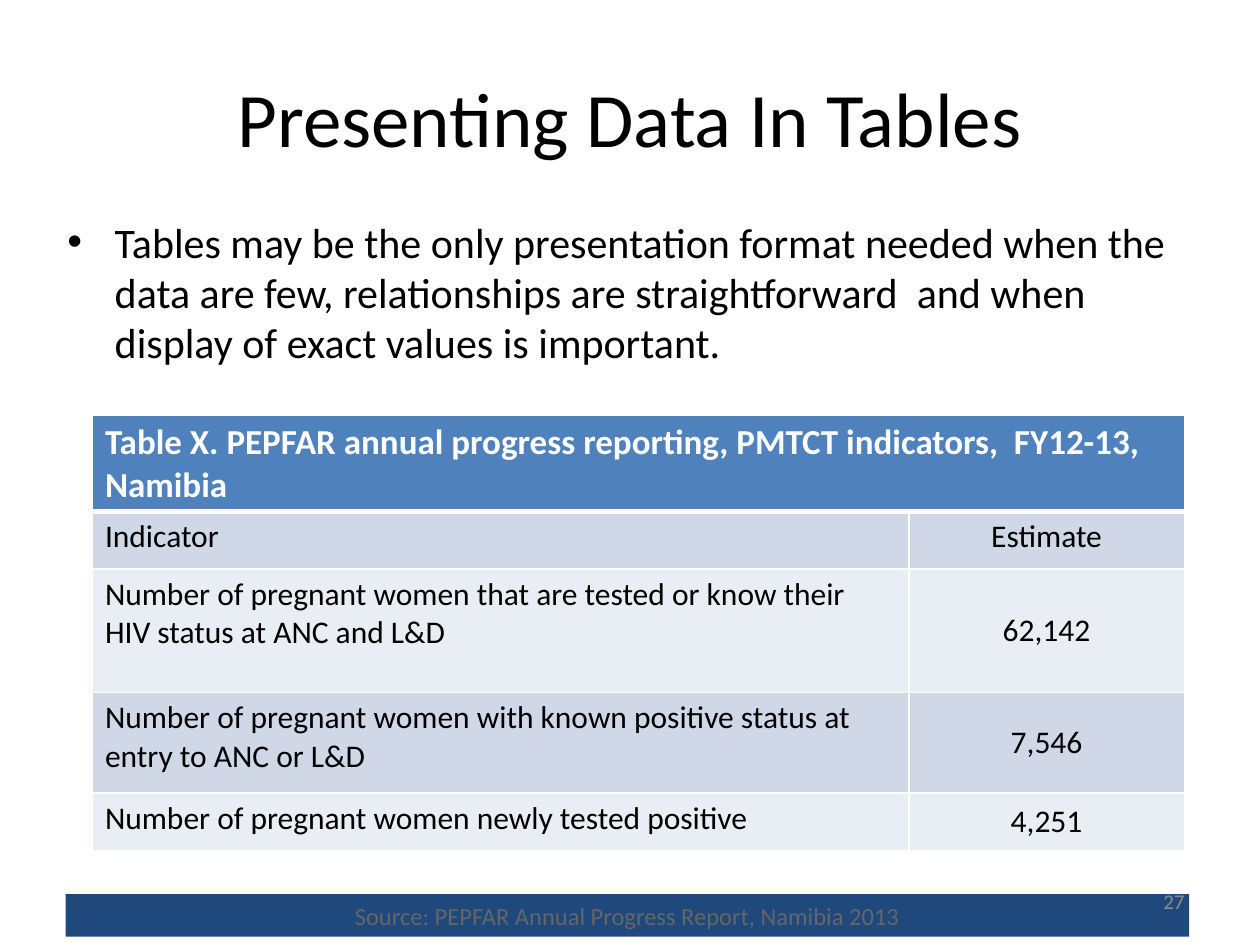
from pptx import Presentation
from pptx.dml.color import RGBColor
from pptx.enum.shapes import MSO_SHAPE as Shape
from pptx.enum.text import MSO_ANCHOR as Anchor, PP_ALIGN as Align
from pptx.oxml import parse_xml
from pptx.oxml.ns import nsdecls
from pptx.util import Pt

BLACK = RGBColor(0x00, 0x00, 0x00)
WHITE = RGBColor(0xFF, 0xFF, 0xFF)
HEADER_BLUE = RGBColor(0x4F, 0x81, 0xBD)
BANDS = (RGBColor(0xD0, 0xD8, 0xE8), RGBColor(0xE9, 0xED, 0xF4))
NAVY = RGBColor(0x1F, 0x49, 0x7D)
SOURCE_GRAY = RGBColor(0x66, 0x66, 0x66)
NUMBER_GRAY = RGBColor(0x8C, 0x8C, 0x8C)

TABLE_TITLE = "Table X. PEPFAR annual progress reporting, PMTCT indicators,  FY12-13, Namibia"
INDICATORS = [
    ("Indicator", "Estimate"),
    ("Number of pregnant women that are tested or know their HIV status at ANC and L&D", "62,142"),
    ("Number of pregnant women with known positive status at entry to ANC or L&D", "7,546"),
    ("Number of pregnant women newly tested positive", "4,251"),
]


def write(frame, text, size=18, color=BLACK, bold=False, align=Align.LEFT):
    paragraph = frame.paragraphs[0]
    paragraph.alignment = align
    run = paragraph.add_run()
    run.text = text
    run.font.name = "Calibri"
    run.font.size = Pt(size)
    run.font.bold = bold
    run.font.color.rgb = color
    return paragraph


def add_bullet(paragraph, indent):
    properties = paragraph._p.get_or_add_pPr()
    properties.set("marL", str(Pt(indent)))
    properties.set("indent", str(-Pt(indent)))
    for tag in ('buFont %s typeface="Arial"', 'buChar %s char="•"'):
        properties.append(parse_xml(f"<a:{tag % nsdecls('a')}/>"))


def set_borders(cell, **widths):
    properties = cell._tc.get_or_add_tcPr()
    for index, side in enumerate("LRTB"):
        properties.insert(index, parse_xml(
            f'<a:ln{side} {nsdecls("a")} w="{Pt(widths.get(side, 1))}">'
            f'<a:solidFill><a:srgbClr val="{WHITE}"/></a:solidFill></a:ln{side}>'))


class SlideBuilder:
    """Draws styled elements on the current slide, with lengths in points."""

    def __init__(self, presentation):
        self.slide = presentation.slides.add_slide(presentation.slide_layouts[6])

    def text(self, box, text, anchor=Anchor.TOP, **style):
        frame = self.slide.shapes.add_textbox(*map(Pt, box)).text_frame
        frame.word_wrap = True
        frame.vertical_anchor = anchor
        return write(frame, text, **style)

    def bar(self, box, text, fill, **style):
        shape = self.slide.shapes.add_shape(Shape.RECTANGLE, *map(Pt, box))
        shape.shadow.inherit = False
        shape.fill.solid()
        shape.fill.fore_color.rgb = fill
        shape.line.fill.background()
        shape.text_frame.word_wrap = True
        shape.text_frame.vertical_anchor = Anchor.MIDDLE
        write(shape.text_frame, text, **style)

    def cell(self, cell, text, fill, **style):
        cell.fill.solid()
        cell.fill.fore_color.rgb = fill
        write(cell.text_frame, text, **style)

    def table(self, box, title, rows, widths, heights):
        table = self.slide.shapes.add_table(
            len(heights), len(widths), *map(Pt, box)).table
        for column, width in zip(table.columns, widths):
            column.width = Pt(width)
        for row, height in zip(table.rows, heights):
            row.height = Pt(height)
        header = table.cell(0, 0)
        header.merge(table.cell(0, 1))
        self.cell(header, title, HEADER_BLUE, size=20, color=WHITE, bold=True)
        for index, (indicator, estimate) in enumerate(rows):
            fill = BANDS[index % 2]
            label, value = table.rows[index + 1].cells
            self.cell(label, indicator, fill)
            self.cell(value, estimate, fill, align=Align.CENTER)
            if index:
                value.vertical_anchor = Anchor.MIDDLE
                value.margin_left = value.margin_right = 0
                value.margin_top = value.margin_bottom = 0
        for index, row in enumerate(table.rows):
            edges = {0: {"B": 3}, 1: {"T": 3}}.get(index, {})
            for cell in row.cells:
                set_borders(cell, **edges)


def main():
    presentation = Presentation()
    presentation.slide_width, presentation.slide_height = Pt(720), Pt(540)
    builder = SlideBuilder(presentation)
    builder.text((36, 21.6, 648, 90), "Presenting Data In Tables",
                 anchor=Anchor.MIDDLE, size=44, align=Align.CENTER)
    body = builder.text(
        (31.5, 120, 648, 108),
        "Tables may be the only presentation format needed when the data are few, "
        "relationships are straightforward  and when display of exact values is important.",
        size=24)
    body.space_before = Pt(4.8)
    add_bullet(body, 27)
    builder.table((52.8, 237, 624, 249), TABLE_TITLE, INDICATORS,
                  widths=(466.5, 157.5), heights=(49, 33, 70.5, 57.5, 33))
    builder.bar((37.5, 511, 642, 24.2), "Source: PEPFAR Annual Progress Report, Namibia 2013",
                NAVY, size=14, color=SOURCE_GRAY, align=Align.CENTER)
    builder.text((516, 500.5, 168, 28.8), "27", anchor=Anchor.MIDDLE,
                 size=12, color=NUMBER_GRAY, align=Align.RIGHT)
    presentation.save("out.pptx")


if __name__ == "__main__":
    main()
